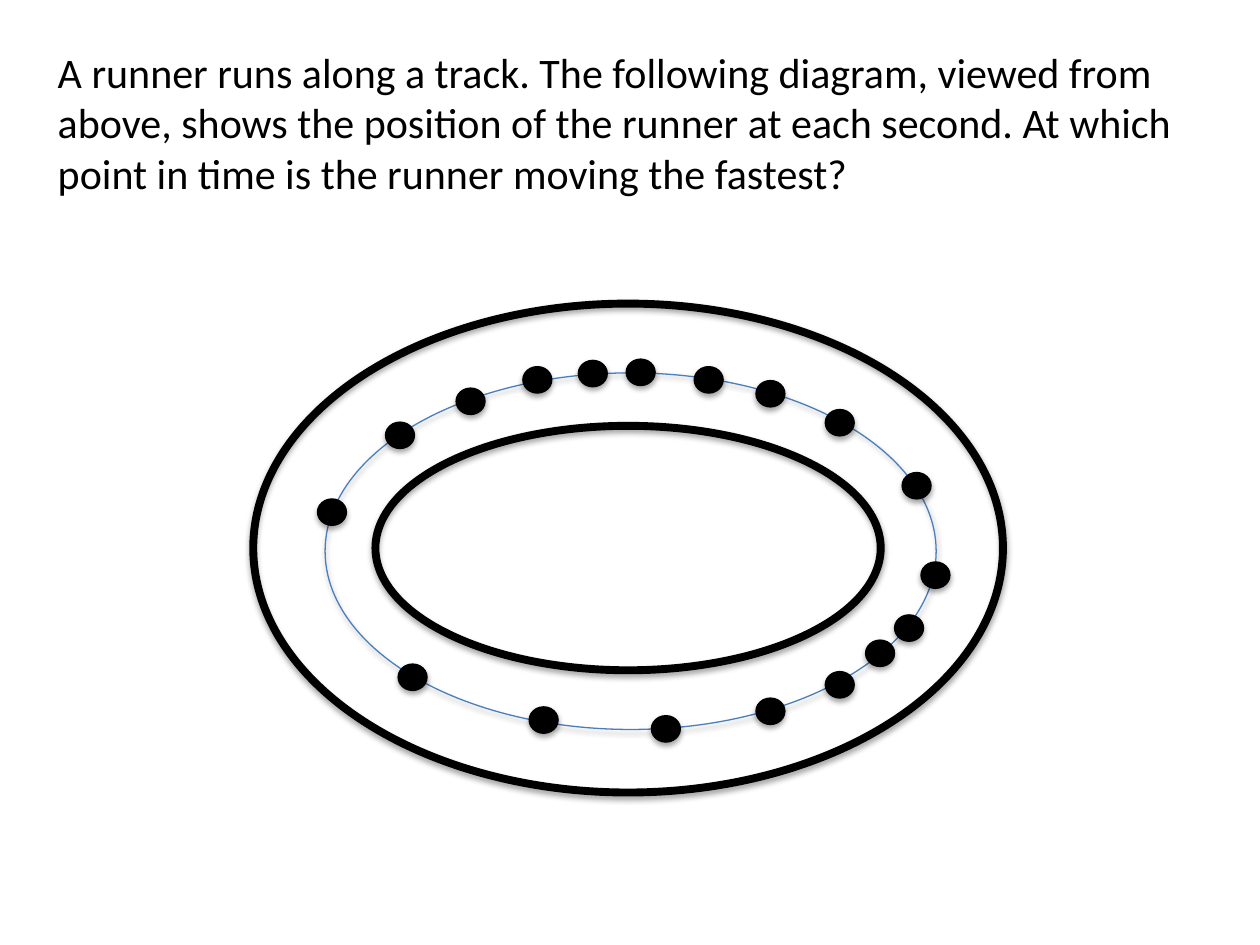
from typing import NamedTuple, Optional

from lxml import etree
from pptx import Presentation
from pptx.dml.color import RGBColor
from pptx.enum import shapes, text
from pptx.oxml import ns
from pptx.util import Inches, Pt

BLACK = RGBColor(0x00, 0x00, 0x00)
BLUE = RGBColor(0x4B, 0x7E, 0xBC)
DOT_W, DOT_H = 0.23, 0.21
QUESTION = (
    "A runner runs along a track. The following diagram, viewed from above, "
    "shows the position of the runner at each second. At which point in time "
    "is the runner moving the fastest?"
)


class Ring(NamedTuple):
    kind: shapes.MSO_SHAPE
    left: float
    top: float
    width: float
    height: float
    line: RGBColor
    weight: float
    fill: Optional[RGBColor] = None


class Spot(NamedTuple):
    """Top left corner of the runner's dot at one second."""
    left: float
    top: float


TRACK = Ring(shapes.MSO_SHAPE.DONUT, 2.01, 2.41, 5.95, 3.88, BLACK, 4.5)
LANE = Ring(shapes.MSO_SHAPE.OVAL, 2.58, 2.96, 4.85, 2.83, BLUE, 0.75)
SPOTS = [
    Spot(4.97, 2.85), Spot(4.59, 2.86), Spot(4.15, 2.91), Spot(3.62, 3.08),
    Spot(3.06, 3.35), Spot(2.52, 3.96), Spot(3.16, 5.27), Spot(4.2, 5.61),
    Spot(5.17, 5.68), Spot(6, 5.54), Spot(6.55, 5.33), Spot(6.87, 5.08),
    Spot(7.1, 4.88), Spot(7.31, 4.46), Spot(7.16, 3.75), Spot(6.55, 3.25),
    Spot(6, 3.02), Spot(5.51, 2.91),
]


def add_shade(shape) -> None:
    """Give the shape a soft shadow straight below it."""
    shape.shadow.inherit = False
    effects = shape._element.spPr.find(ns.qn("a:effectLst"))
    outer = etree.SubElement(
        effects, ns.qn("a:outerShdw"), blurRad=str(Pt(3.1)),
        dist=str(Pt(1.8)), dir="5400000", rotWithShape="0")
    color = etree.SubElement(outer, ns.qn("a:srgbClr"), val=str(BLACK))
    etree.SubElement(color, ns.qn("a:alpha"), val="35000")


def draw_ring(group, ring: Ring) -> None:
    shape = group.shapes.add_shape(
        ring.kind, Inches(ring.left), Inches(ring.top),
        Inches(ring.width), Inches(ring.height))
    if ring.fill is None:
        shape.fill.background()
    else:
        shape.fill.solid()
        shape.fill.fore_color.rgb = ring.fill
    shape.line.color.rgb = ring.line
    shape.line.width = Pt(ring.weight)
    add_shade(shape)


def draw_dot(group, spot: Spot) -> None:
    draw_ring(group, Ring(shapes.MSO_SHAPE.OVAL, spot.left, spot.top,
                          DOT_W, DOT_H, BLACK, 0.75, BLACK))


def add_question(slide) -> None:
    box = slide.shapes.add_textbox(
        Inches(0.36), Inches(0.32), Inches(9.29), Inches(1.31))
    frame = box.text_frame
    frame.word_wrap = True
    frame.auto_size = text.MSO_AUTO_SIZE.SHAPE_TO_FIT_TEXT
    frame.text = QUESTION
    font = frame.paragraphs[0].runs[0].font
    font.name = "Calibri"
    font.size = Pt(24)
    font.color.rgb = BLACK


def main() -> None:
    deck = Presentation()
    deck.slide_width, deck.slide_height = Inches(10), Inches(7.5)
    slide = deck.slides.add_slide(deck.slide_layouts[6])
    add_question(slide)
    group = slide.shapes.add_group_shape()
    for ring in (TRACK, LANE):
        draw_ring(group, ring)
    for spot in SPOTS:
        draw_dot(group, spot)
    deck.save("out.pptx")


if __name__ == "__main__":
    main()
